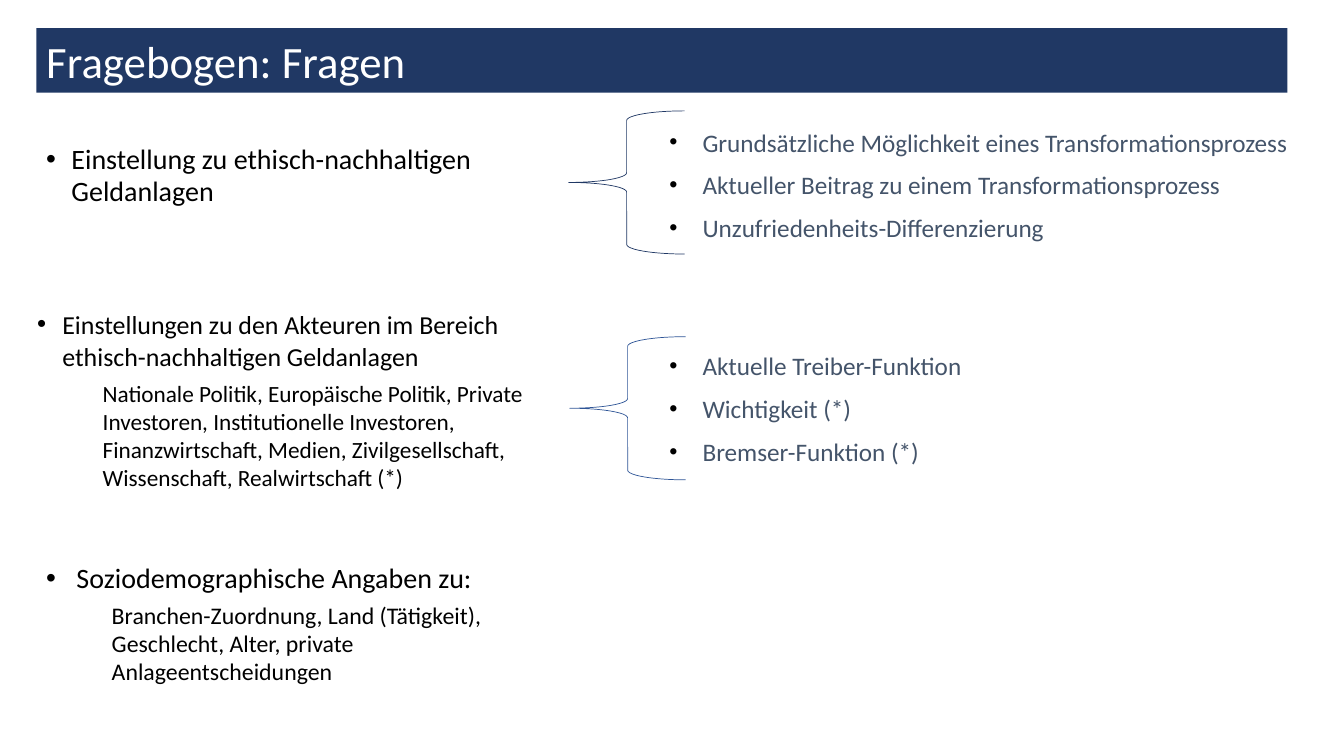
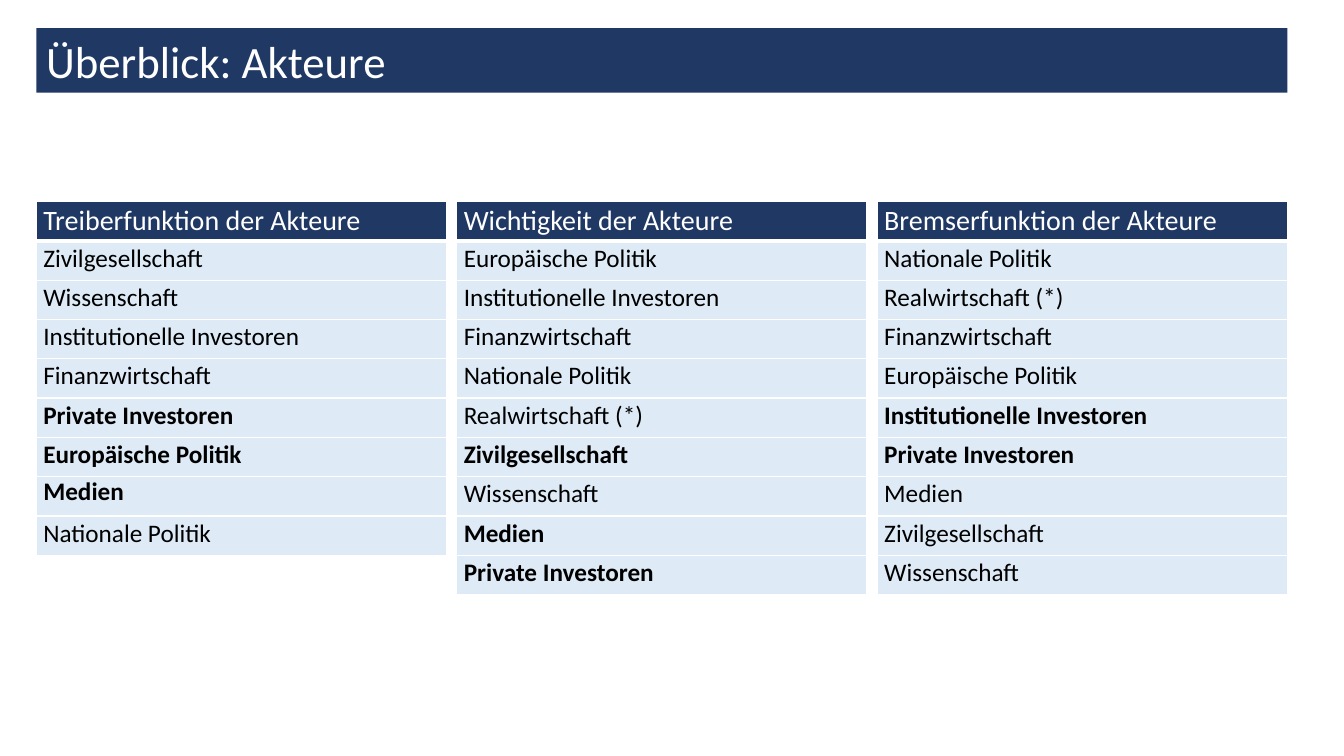
import pptx
import pptx.util
import pptx.dml.color
import pptx.enum.shapes
import pptx.enum.text
import pptx.oxml
import pptx.oxml.ns

PX = 9144  # EMU per px, 100 px to the inch
FONT = "Calibri"
NAVY, BLUE, PALE = "203864", "2F5597", "DEEBF7"
SLATE, BLACK, WHITE = "44546A", "000000", "FFFFFF"
SHAPE = pptx.enum.shapes.MSO_SHAPE
ANCHOR = pptx.enum.text.MSO_ANCHOR
NS = pptx.oxml.ns.nsdecls("a")


def px(*nums):
    return [pptx.util.Emu(num * PX) for num in nums]


def color(code):
    return pptx.dml.color.RGBColor.from_string(code)


def style(para, size, code, bold=False):
    for run in para.runs:
        run.font.name = FONT
        run.font.size = pptx.util.Pt(size)
        run.font.bold = bold
        run.font.color.rgb = color(code)


def space(para, line=None, before=0, after=0):
    """A float is a share of the line height, an integer is points."""
    if line:
        para.line_spacing = line if isinstance(line, float) else pptx.util.Pt(line)
    para.space_before = pptx.util.Pt(before)
    para.space_after = pptx.util.Pt(after)


def indent(para, left, hang=0):
    props = para._p.get_or_add_pPr()
    props.set("marL", str(left * PX))
    props.set("indent", str(-hang * PX))
    return props


def bullet(para, hang, share=100):
    props = indent(para, hang, hang)
    for part in (
        f'<a:buClr {NS}><a:srgbClr val="{BLACK}"/></a:buClr>',
        f'<a:buSzPct {NS} val="{share * 1000}"/>',
        f'<a:buFont {NS} typeface="Arial"/>',
        f'<a:buChar {NS} char="•"/>',
    ):
        props.append(pptx.oxml.parse_xml(part))


def text_box(slide, box, lines, anchor=ANCHOR.TOP):
    frame = slide.shapes.add_textbox(*px(*box)).text_frame
    frame.word_wrap = True
    frame.vertical_anchor = anchor
    frame.text = "\n".join(lines)
    return frame.paragraphs


def title_bar(slide, title):
    bar = slide.shapes.add_shape(SHAPE.RECTANGLE, *px(36, 28, 1241, 64))
    bar.shadow.inherit = False
    bar.fill.solid()
    bar.fill.fore_color.rgb = color(NAVY)
    bar.line.fill.background()
    bar.text_frame.text = title
    bar.text_frame.vertical_anchor = ANCHOR.MIDDLE
    para = bar.text_frame.paragraphs[0]
    para.alignment = pptx.enum.text.PP_ALIGN.LEFT
    style(para, 32, WHITE)


def topic(slide, box, lines, size, line, hang=25, small=17):
    """A bulleted heading, with an indented detail below if there is one."""
    head, *rest = text_box(slide, box, lines)
    space(head, line, 10)
    bullet(head, hang)
    style(head, size, BLACK)
    for para in rest:
        para.level = 1
        space(para, 20, 5)
        indent(para, 65)
        style(para, small, BLACK)


def aspects(slide, box, lines, anchor=ANCHOR.TOP):
    for para in text_box(slide, box, lines, anchor):
        space(para, before=3, after=6)
        bullet(para, 33, 92)
        style(para, 18, SLATE)


def brace(slide, left, top, code):
    shape = slide.shapes.add_shape(SHAPE.LEFT_BRACE, *px(left, top, 115, 142))
    shape.shadow.inherit = False
    shape.fill.background()
    shape.line.color.rgb = color(code)
    shape.line.width = pptx.util.Pt(0.5)


def border(cell, side, width):
    cell._tc.get_or_add_tcPr().append(pptx.oxml.parse_xml(
        f'<a:ln{side} {NS} w="{width * 12700}"><a:solidFill>'
        f'<a:srgbClr val="{WHITE}"/></a:solidFill></a:ln{side}>'))


def ranking(slide, left, top, head, names, bold, tight=()):
    """One column of actors; bold and tight hold ranks counted from 1."""
    rows, high = [head, *names], 39
    table = slide.shapes.add_table(
        len(rows), 1, *px(left, top, 407, high * len(rows))).table
    table.first_row = table.horz_banding = False
    for rank, name in enumerate(rows):
        table.rows[rank].height = px(high)[0]
        cell = table.cell(rank, 0)
        cell.margin_left, cell.margin_right = px(7, 7)
        cell.margin_top = cell.margin_bottom = 0
        for side in "LRTB":
            thick = (rank == 0 and side == "B") or (rank == 1 and side == "T")
            border(cell, side, 3 if thick else 1)
        cell.fill.solid()
        cell.fill.fore_color.rgb = color(PALE if rank else NAVY)
        cell.text_frame.text = name
        para = cell.text_frame.paragraphs[0]
        space(para, None if rank in tight else 1.07)
        style(para, 18 if rank else 20, BLACK if rank else WHITE, rank in bold)


def questions(slide):
    title_bar(slide, "Fragebogen: Fragen")
    # Topics on the left
    topic(slide, (36, 137, 495, 148),
          ["Einstellung zu ethisch-nachhaltigen Geldanlagen"], 20, 23)
    topic(slide, (27, 300, 515, 194),
          ["Einstellungen zu den Akteuren im Bereich ethisch-nachhaltigen Geldanlagen",
           "Nationale Politik, Europäische Politik, Private Investoren, "
           "Institutionelle Investoren, Finanzwirtschaft, Medien, "
           "Zivilgesellschaft, Wissenschaft, Realwirtschaft (*)"],
          18.5, 23, small=16.6)
    topic(slide, (36, 555, 515, 194),
          ["Soziodemographische Angaben zu:",
           "Branchen-Zuordnung, Land (Tätigkeit), Geschlecht, Alter, "
           "private Anlageentscheidungen"], 20, 0.9, hang=30)
    # Aspects on the right
    brace(slide, 564, 110, NAVY)
    aspects(slide, (654, 121, 670, 130),
            ["Grundsätzliche Möglichkeit eines Transformationsprozess",
             "Aktueller Beitrag zu einem Transformationsprozess",
             "Unzufriedenheits-Differenzierung"])
    brace(slide, 565, 334, BLUE)
    aspects(slide, (654, 308, 483, 194),
            ["Aktuelle Treiber-Funktion", "Wichtigkeit (*)", "Bremser-Funktion (*)"],
            ANCHOR.MIDDLE)


def overview(slide):
    title_bar(slide, "Überblick: Akteure")
    lists = (
        ("Treiberfunktion der Akteure",
         ["Zivilgesellschaft", "Wissenschaft", "Institutionelle Investoren",
          "Finanzwirtschaft", "Private Investoren", "Europäische Politik",
          "Medien", "Nationale Politik"], (5, 6, 7), (7,)),
        ("Wichtigkeit der Akteure",
         ["Europäische Politik", "Institutionelle Investoren", "Finanzwirtschaft",
          "Nationale Politik", "Realwirtschaft (*)", "Zivilgesellschaft",
          "Wissenschaft", "Medien", "Private Investoren"], (6, 8, 9)),
        ("Bremserfunktion der Akteure",
         ["Nationale Politik", "Realwirtschaft (*)", "Finanzwirtschaft",
          "Europäische Politik", "Institutionelle Investoren",
          "Private Investoren", "Medien", "Zivilgesellschaft",
          "Wissenschaft"], (5, 6)),
    )
    for col, parts in enumerate(lists):
        ranking(slide, 36 + 417 * col, 200, *parts)


def main():
    deck = pptx.Presentation()
    deck.slide_width, deck.slide_height = px(1333, 750)
    for build in (questions, overview):
        build(deck.slides.add_slide(deck.slide_layouts[6]))
    deck.save("out.pptx")


if __name__ == "__main__":
    main()
